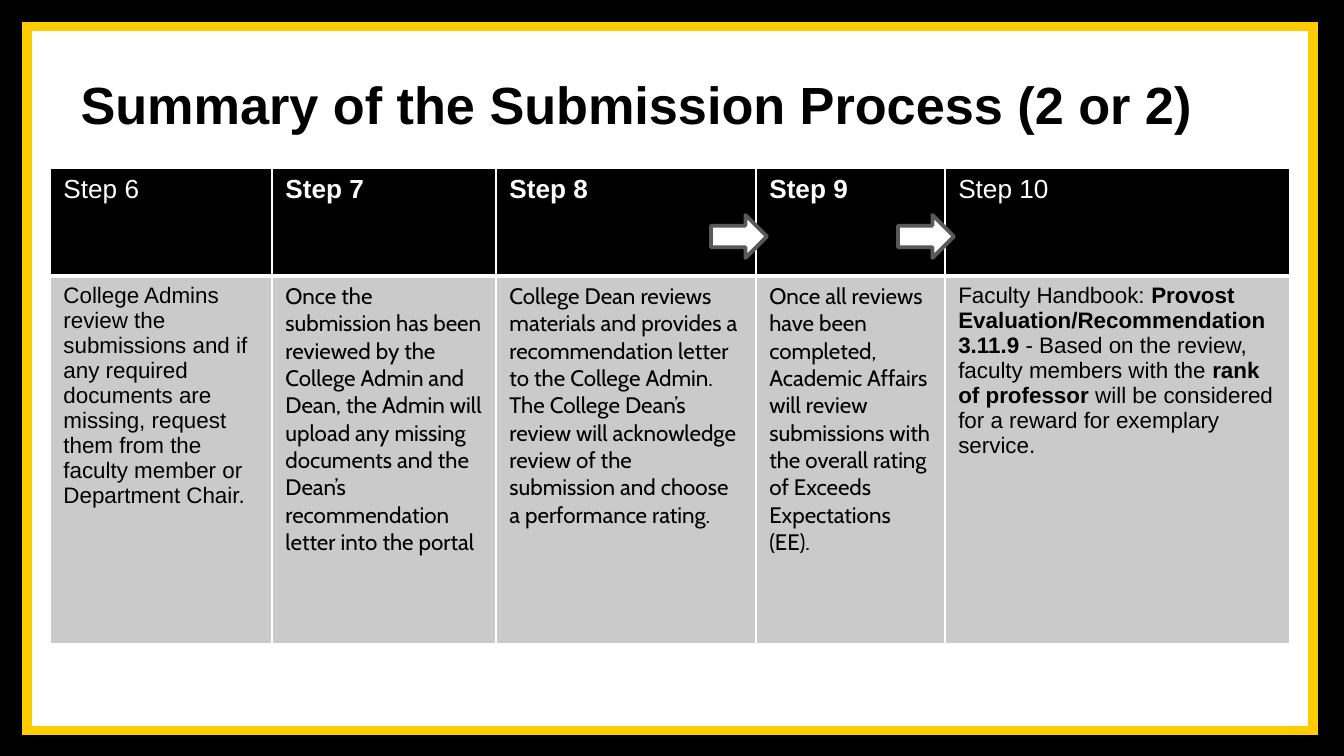
from lxml import etree
from pptx import Presentation
from pptx import util as u
from pptx.dml.color import RGBColor
from pptx.enum import shapes, text
from pptx.oxml.ns import qn

COLORS = {"black": "000000", "gold": "FFCC00", "white": "FFFFFF",
          "gray": "CACACA", "arrow line": "595959"}
TITLE = "Summary of the Submission Process (2 or 2)"
FRAMES = [("black", (0, 0, 1344, 756)),
          ("gold", (22, 22, 1296, 713)),
          ("white", (32, 31, 1276, 695))]

# Each step: heading, heading is bold, column width, body font, body spans (text, bold)
STEPS = [
    ("Step 6", False, 222, "Arial", [
        ("College Admins review the submissions and if any required documents are "
         "missing, request them from the faculty member or Department Chair.", False)]),
    ("Step 7", True, 224, "Cabin", [
        ("Once the submission has been reviewed by the College Admin and Dean, the "
         "Admin will upload any missing documents and the Dean’s recommendation "
         "letter into the portal", False)]),
    ("Step 8", True, 260, "Cabin", [
        ("College Dean reviews materials and provides a recommendation letter to the "
         "College Admin. The College Dean’s review will acknowledge review of the "
         "submission and choose a performance rating.", False)]),
    ("Step 9", True, 189, "Cabin", [
        ("Once all reviews have been completed, Academic Affairs will review "
         "submissions with the overall rating of Exceeds Expectations (EE).", False)]),
    ("Step 10", False, 345, "Arial", [
        ("Faculty Handbook: ", False),
        ("Provost Evaluation/Recommendation 3.11.9 ", True),
        ("- Based on the review, faculty members with the ", False),
        ("rank of professor", True),
        (" will be considered for a reward for exemplary service.", False)]),
]
TABLE_LEFT, TABLE_TOP = 50, 168
ROW_HEIGHTS = [108, 368]
ARROW_LEFTS = [711, 898]
ARROW_TOP, ARROW_WIDTH, ARROW_HEIGHT = 215, 56, 43


def px(*lengths):
    """Turn pixel lengths into EMU."""
    return [u.Emu(round(length * 914400 / 134.4)) for length in lengths]


def color(name):
    return RGBColor.from_string(COLORS[name])


def add_filled(slide, kind, place, fill):
    shape = slide.shapes.add_shape(kind, *px(*place))
    shape.shadow.inherit = False
    shape.fill.solid()
    shape.fill.fore_color.rgb = color(fill)
    shape.line.fill.background()
    return shape


def set_font(font, name, size, fill):
    font.name, font.size = name, u.Pt(size)
    font.color.rgb = color(fill)


def fill_cell(cell, spans, font, size, ink, fill, bottom):
    para = cell.text_frame.paragraphs[0]
    set_font(para.font, font, size, ink)
    for words, bold in spans:
        span = para.add_run()
        span.text = words
        span.font.bold = bold
    properties = cell._tc.get_or_add_tcPr()
    for side, points in (("L", 1), ("R", 1), ("T", 1), ("B", bottom)):
        line = etree.SubElement(properties, qn(f"a:ln{side}"), w=str(u.Pt(points)))
        paint = etree.SubElement(line, qn("a:solidFill"))
        etree.SubElement(paint, qn("a:srgbClr"), val=COLORS["white"])
    cell.fill.solid()
    cell.fill.fore_color.rgb = color(fill)


def add_title(slide):
    box = slide.shapes.add_textbox(*px(50, 0, 1172, 148))
    frame = box.text_frame
    frame.word_wrap = True
    frame.vertical_anchor = text.MSO_ANCHOR.BOTTOM
    frame.margin_top, frame.margin_bottom = px(13, 13)
    para = frame.paragraphs[0]
    para.text = TITLE
    para.alignment = text.PP_ALIGN.CENTER
    set_font(para.font, "Arial", 28, "black")
    para.font.bold = True


def add_steps(slide):
    widths = [step[2] for step in STEPS]
    place = px(TABLE_LEFT, TABLE_TOP, sum(widths), sum(ROW_HEIGHTS))
    table = slide.shapes.add_table(2, len(STEPS), *place).table
    for row, height in zip(table.rows, px(*ROW_HEIGHTS)):
        row.height = height
    for index, (heading, bold, width, font, spans) in enumerate(STEPS):
        table.columns[index].width = px(width)[0]
        fill_cell(table.cell(0, index), [(heading, bold)],
                  "Arial", 14, "white", "black", bottom=3)
        fill_cell(table.cell(1, index), spans,
                  font, 12, "black", "gray", bottom=1)


def main():
    deck = Presentation()
    deck.slide_width, deck.slide_height = px(1344, 756)
    slide = deck.slides.add_slide(deck.slide_layouts[6])
    for fill, place in FRAMES:
        add_filled(slide, shapes.MSO_SHAPE.RECTANGLE, place, fill)
    add_title(slide)
    add_steps(slide)
    for left in ARROW_LEFTS:
        arrow = add_filled(slide, shapes.MSO_SHAPE.RIGHT_ARROW,
                           (left, ARROW_TOP, ARROW_WIDTH, ARROW_HEIGHT), "white")
        arrow.line.color.rgb = color("arrow line")
        arrow.line.width = u.Pt(2)
    deck.save("out.pptx")


if __name__ == "__main__":
    main()
